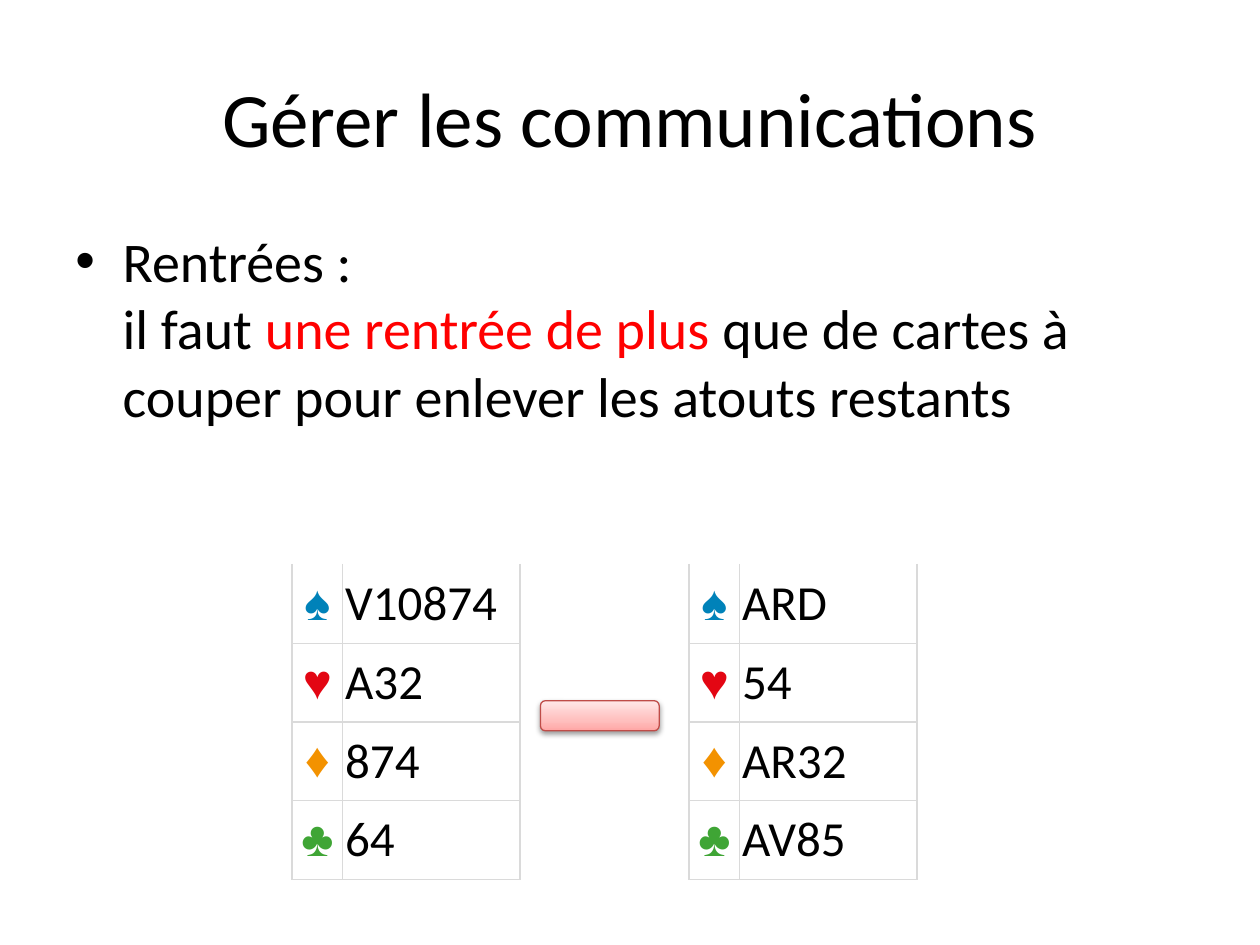
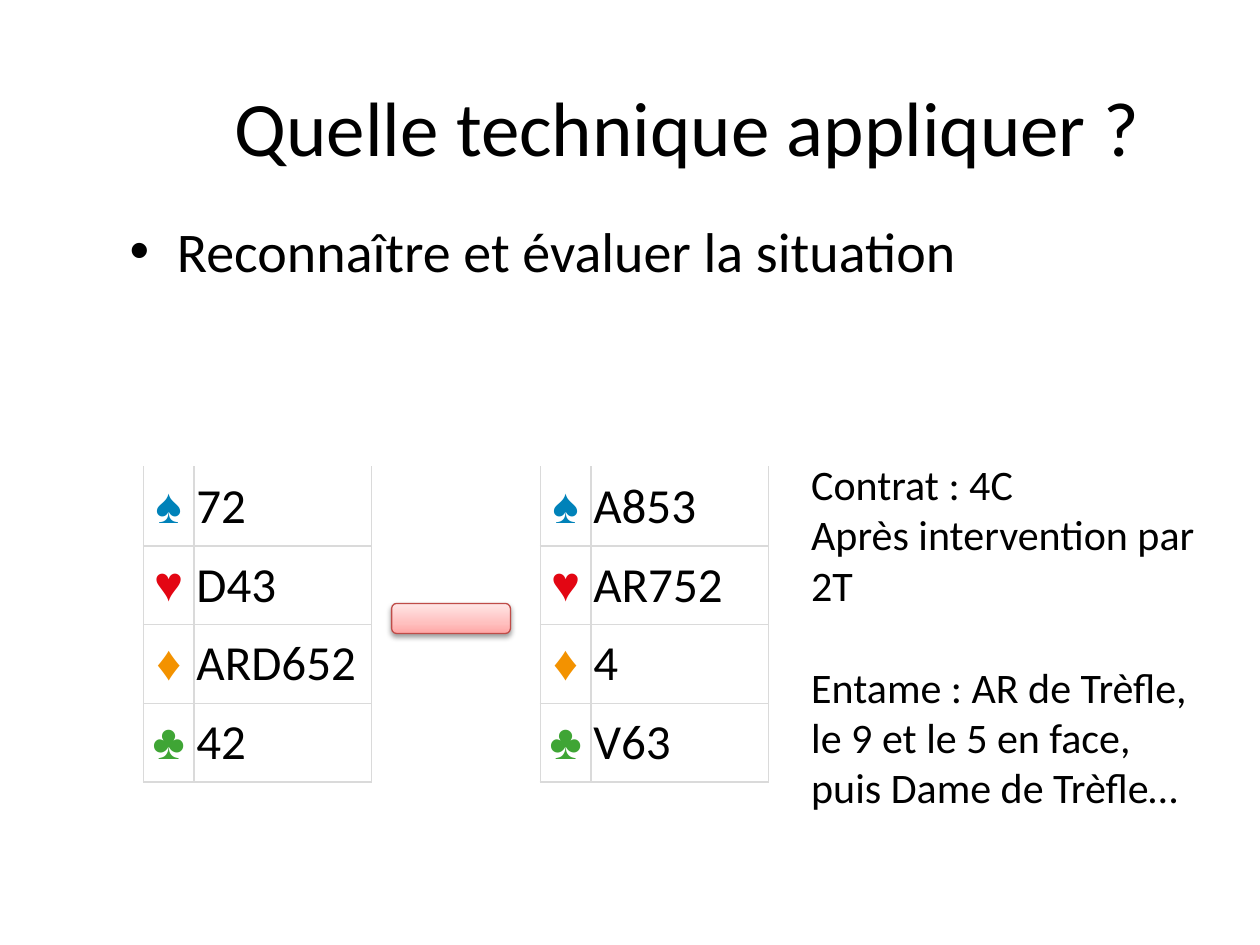
from lxml.etree import SubElement
from pptx import Presentation
from pptx.dml.color import RGBColor
from pptx.enum.shapes import MSO_SHAPE as Shape
from pptx.enum.text import MSO_ANCHOR as Anchor, MSO_AUTO_SIZE as AutoSize, PP_ALIGN as Align
from pptx.oxml.ns import qn
from pptx.util import Pt

BLACK, RED, WHITE = "000000", "FF0000", "FFFFFF"
GRID, BAR_LINE = "DADADA", "BF4C48"
BAR_STOPS = [(0, "FFA6A5"), (35, "FFC0BF"), (100, "FFE7E7")]
SUITS = [("♠", "0082B9"), ("♥", "E30613"), ("♦", "F39200"), ("♣", "3FA535")]
TEXT_FONT, SUIT_FONT = "Calibri", "Times New Roman"
SUIT_WIDTH, CARDS_WIDTH, ROW_HEIGHT = 28.8, 101.5, 45
HAND_STEP = 226.8
BAR_LEFT, BAR_TOP, BAR_WIDTH, BAR_HEIGHT = 141.8, 77.8, 67.9, 17.2


def paint(color, value):
    """Give a colour format a hex colour."""
    color.rgb = RGBColor.from_string(value)


def style(span, size, color=BLACK, font=TEXT_FONT):
    span.font.size = Pt(size)
    span.font.name = font
    paint(span.font.color, color)


def add_child(parent, tag, **attributes):
    return SubElement(parent, qn(tag), {key: str(value) for key, value in attributes.items()})


def add_box(slide, left, top, width, height):
    box = slide.shapes.add_textbox(Pt(left), Pt(top), Pt(width), Pt(height))
    box.text_frame.word_wrap = True
    return box


def add_title(slide, text, left, top):
    frame = add_box(slide, left, top, 648, 90).text_frame
    frame.vertical_anchor = Anchor.MIDDLE
    frame.text = text
    para = frame.paragraphs[0]
    para.alignment = Align.CENTER
    style(para.runs[0], 44)


def add_bullet(slide, left, top, width, height, text, *more):
    """Add a bulleted paragraph; more holds further (text, colour) spans."""
    para = add_box(slide, left, top, width, height).text_frame.paragraphs[0]
    para.text = text
    properties = para._p.get_or_add_pPr()
    properties.set("marL", str(Pt(27)))
    properties.set("indent", str(Pt(-27)))
    add_child(properties, "a:buFont", typeface="Arial")
    add_child(properties, "a:buChar", char="•")
    for span in para.runs:
        style(span, 32)
    for words, color in more:
        span = para.add_run()
        span.text = words
        style(span, 32, color)


def add_notes_on_play(slide, left, top, width, height, blocks):
    """Add blocks of lines, with a line's gap between blocks."""
    box = add_box(slide, left, top, width, height)
    frame = box.text_frame
    frame.auto_size = AutoSize.SHAPE_TO_FIT_TEXT
    frame.text = "\n".join(line for block in blocks for line in block)
    for para in frame.paragraphs:
        style(para.runs[0], 24)
    start = 0
    for block in blocks[:-1]:
        start += len(block)
        frame.paragraphs[start].space_before = Pt(29.3)


def draw_borders(cell, sides):
    properties = cell._tc.get_or_add_tcPr()
    for index, side in enumerate(sides):
        line = add_child(properties, f"a:ln{side}", w=Pt(1))
        add_child(add_child(line, "a:solidFill"), "a:srgbClr", val=GRID)
        properties.insert(index, line)


def fill_cell(cell, text, color, font, alignment):
    cell.fill.solid()
    paint(cell.fill.fore_color, WHITE)
    cell.margin_left = cell.margin_right = cell.margin_top = cell.margin_bottom = Pt(1.5)
    cell.vertical_anchor = Anchor.MIDDLE
    cell.text = text
    para = cell.text_frame.paragraphs[0]
    para.alignment = alignment
    para.space_after = Pt(14)
    style(para.runs[0], 28, color, font)


def add_hand(slide, left, top, holdings):
    """Add one player's cards, a row for each suit."""
    table = slide.shapes.add_table(
        len(SUITS), 2, Pt(left), Pt(top),
        Pt(SUIT_WIDTH + CARDS_WIDTH), Pt(ROW_HEIGHT * len(SUITS))).table
    table.first_row = table.horz_banding = False
    table.columns[0].width = Pt(SUIT_WIDTH)
    table.columns[1].width = Pt(CARDS_WIDTH)
    for row, ((suit, color), cards) in enumerate(zip(SUITS, holdings)):
        fill_cell(table.cell(row, 0), suit, color, SUIT_FONT, Align.CENTER)
        fill_cell(table.cell(row, 1), cards, BLACK, TEXT_FONT, Align.LEFT)
        for column in range(2):
            draw_borders(table.cell(row, column), "LRTB" if row else "LRB")


def add_bar(slide, left, top):
    """Add the shaded bar that stands for the table between two hands."""
    bar = slide.shapes.add_shape(
        Shape.ROUNDED_RECTANGLE, Pt(left), Pt(top), Pt(BAR_WIDTH), Pt(BAR_HEIGHT))
    bar.fill.gradient()
    bar.fill.gradient_angle = 90
    stops = bar._element.spPr.find(".//" + qn("a:gsLst"))
    for stop in list(stops):
        stops.remove(stop)
    for position, color in BAR_STOPS:
        add_child(add_child(stops, "a:gs", pos=position * 1000), "a:srgbClr", val=color)
    paint(bar.line.color, BAR_LINE)
    bar.line.width = Pt(0.75)
    bar.shadow.inherit = False
    effects = bar._element.spPr.find(qn("a:effectLst"))
    shadow = add_child(effects, "a:outerShdw", blurRad=Pt(3.1), dist=Pt(1.6),
                       dir=90 * 60000, rotWithShape=0)
    add_child(add_child(shadow, "a:srgbClr", val=BLACK), "a:alpha", val=38000)


def add_deal(slide, left, top, west, east):
    add_hand(slide, left, top, west)
    add_hand(slide, left + HAND_STEP, top, east)
    add_bar(slide, left + BAR_LEFT, top + BAR_TOP)


def add_page(deck):
    return deck.slides.add_slide(deck.slide_layouts[6])


def main():
    deck = Presentation()
    deck.slide_width, deck.slide_height = Pt(720), Pt(540)

    page = add_page(deck)
    add_title(page, "Gérer les communications", 36, 21.6)
    add_bullet(page, 36, 126, 648, 166, "Rentrées :\vil faut ",
               ("une rentrée de plus ", RED),
               ("que de cartes à couper pour enlever les atouts restants", BLACK))
    add_deal(page, 167, 322.6, ["V10874", "A32", "874", "64"], ["ARD", "54", "AR32", "AV85"])

    page = add_page(deck)
    add_title(page, "Quelle technique appliquer ?", 69, 26.6)
    add_bullet(page, 67, 120.2, 634, 150, "Reconnaître et évaluer la situation")
    add_deal(page, 82, 267, ["72", "D43", "ARD652", "42"], ["A853", "AR752", "4", "V63"])
    add_notes_on_play(page, 456.5, 258.5, 234.7, 211, [
        ["Contrat : 4C", "Après intervention par 2T"],
        ["Entame : AR de Trèfle, le 9 et le 5 en face, puis Dame de Trèfle…"]])

    deck.save("out.pptx")


if __name__ == "__main__":
    main()
